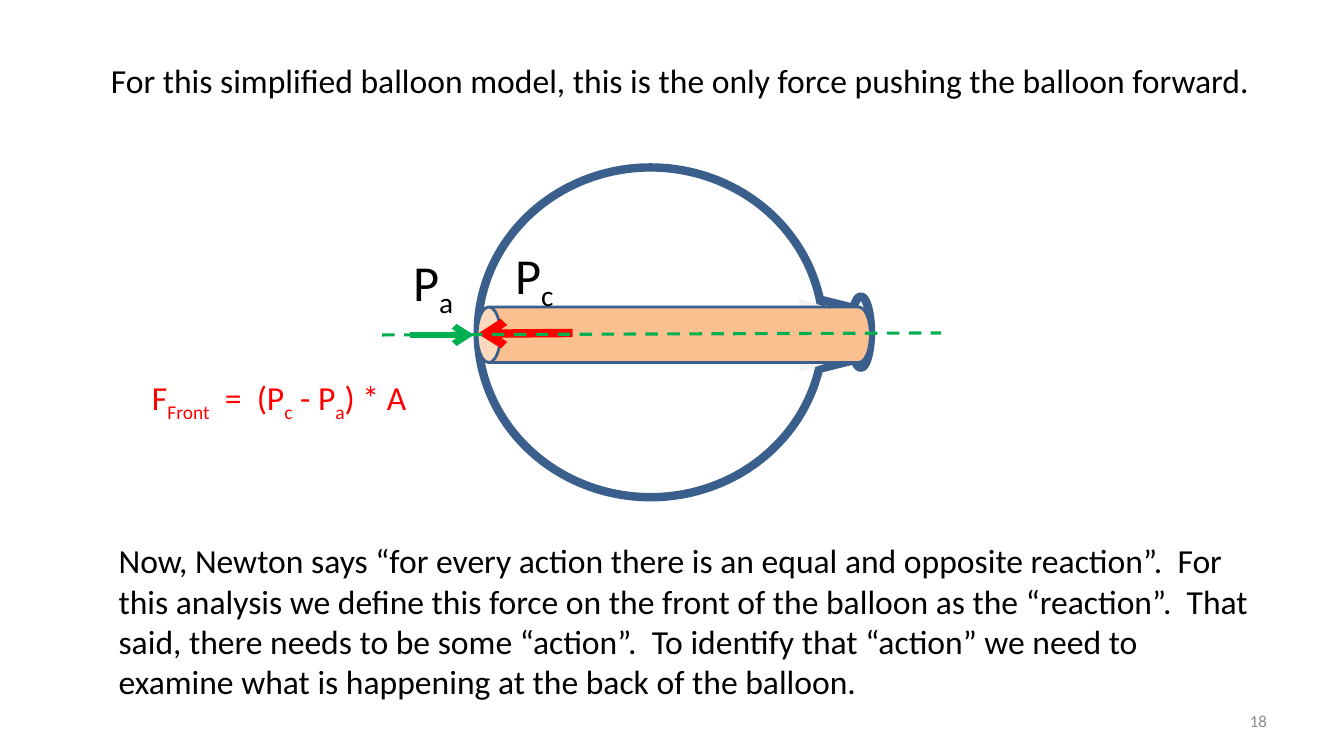
from lxml import etree
from pptx import Presentation
from pptx.dml.color import RGBColor
from pptx.enum.dml import MSO_LINE
from pptx.enum.shapes import MSO_CONNECTOR, MSO_SHAPE
from pptx.enum.text import MSO_ANCHOR, MSO_AUTO_SIZE, PP_ALIGN
from pptx.oxml.ns import qn
from pptx.util import Cm, Pt

BLACK = RGBColor(0x00, 0x00, 0x00)
WHITE = RGBColor(0xFF, 0xFF, 0xFF)
BLUE = RGBColor(0x3A, 0x5F, 0x8C)
PALE_GRAY = RGBColor(0xF2, 0xF2, 0xF2)
GRAY = RGBColor(0x8C, 0x8C, 0x8C)
ORANGE = RGBColor(0xFA, 0xC0, 0x90)
RED = RGBColor(0xFF, 0x00, 0x00)
GREEN = RGBColor(0x00, 0xB0, 0x50)

STRAIGHT = MSO_CONNECTOR.STRAIGHT
ELLIPSE, TRAPEZOID, CAN = MSO_SHAPE.OVAL, MSO_SHAPE.TRAPEZOID, MSO_SHAPE.CAN
DASH = MSO_LINE.DASH
TOP, MIDDLE = MSO_ANCHOR.TOP, MSO_ANCHOR.MIDDLE
LEFT, RIGHT = PP_ALIGN.LEFT, PP_ALIGN.RIGHT
NO_AUTOFIT = MSO_AUTO_SIZE.NONE

TITLE_BOX = (2.54, 1.37, 29.44, 1.27)
BALLOON_BOX = (12.04, 4.22, 8.71, 8.31)
EXPLANATION_BOX = (2.74, 13.49, 29.01, 4.37)
NUMBER_BOX = (24.28, 17.65, 7.9, 1.02)

TITLE = "For this simplified balloon model, this is the only force pushing the balloon forward."
EXPLANATION = (
    "Now, Newton says “for every action there is an equal and opposite reaction”.  "
    "For this analysis we define this force on the front of the balloon as the “reaction”.  "
    "That said, there needs to be some “action”.  To identify that “action” we need to "
    "examine what is happening at the back of the balloon."
)


def place(box, left, top, width, height):
    return [Cm(round(length, 2)) for length in (box[0] + left, box[1] + top, width, height)]


def write(shape, spans, size, color, align=LEFT, anchor=TOP):
    frame = shape.text_frame
    frame.word_wrap = True
    frame.auto_size = NO_AUTOFIT
    frame.vertical_anchor = anchor
    paragraph = frame.paragraphs[0]
    paragraph.alignment = align
    font = paragraph.font
    font.name, font.size = "Calibri", Pt(size)
    font.color.rgb = color
    for position, text in enumerate(spans):
        span = paragraph.add_run()
        span.text = text
        if position % 2:
            span.font._element.set("baseline", "-25000")


def add_text(shapes, area, spans, size, color, align=LEFT, anchor=TOP):
    write(shapes.add_textbox(*area), spans, size, color, align, anchor)


def add_part(shapes, kind, area, fill, line_width=0, rotation=0, adjustment=None):
    part = shapes.add_shape(kind, *area)
    part.shadow.inherit = False
    part.rotation = rotation
    part.fill.solid()
    part.fill.fore_color.rgb = fill
    if line_width:
        part.line.color.rgb = BLUE
        part.line.width = Pt(line_width)
    else:
        part.line.fill.background()
    if adjustment is not None:
        part.adjustments[0] = adjustment


def add_line(shapes, box, start, end, color, width, arrow=False, dash=None):
    ends = [Cm(round(box[axis] + point[axis], 2)) for point in (start, end) for axis in (0, 1)]
    connector = shapes.add_connector(STRAIGHT, *ends)
    line = connector.line
    line.color.rgb = color
    line.width = Pt(width)
    if dash is not None:
        line.dash_style = dash
    if arrow:
        etree.SubElement(line._get_or_add_ln(), qn("a:tailEnd"), type="arrow")
    etree.SubElement(connector._element.spPr, qn("a:effectLst"))


def add_title(slide, box):
    title = slide.shapes.title
    title.left, title.top, title.width, title.height = place(box, 0, 0, *box[2:])
    write(title, [TITLE], 24, BLACK)


def add_balloon(slide, box):
    parts = slide.shapes.add_group_shape().shapes
    add_part(parts, TRAPEZOID, place(box, 8.1, 3.63, 1.83, 1.14), WHITE, 6, 90)
    add_part(parts, ELLIPSE, place(box, 0, 0, *box[2:]), WHITE, 6)
    add_part(parts, ELLIPSE, place(box, 9.4, 3.25, 0.51, 1.8), PALE_GRAY, 6)
    add_part(parts, TRAPEZOID, place(box, 7.75, 3.66, 1.85, 1.14), PALE_GRAY, 0, 90, 0.32)
    add_part(slide.shapes, CAN, place(box, 4.24, -0.74, 1.4, 9.91), ORANGE, 2, 270, 0.42)


def add_forces(slide, box):
    shapes = slide.shapes
    add_line(shapes, box, (2.39, 4.17), (0, 4.19), RED, 6, arrow=True)
    add_text(shapes, place(box, 0.69, 1.8, 2.31, 1.8), ["P", "c"], 36, BLACK)
    add_line(shapes, box, (-2.41, 4.22), (11.68, 4.17), GREEN, 2.25, dash=DASH)
    formula = ["F", "Front", "  =  (P", "c", " - P", "a", ") * A"]
    add_text(shapes, place(box, -8.46, 5.16, 8.71, 1.27), formula, 24, RED)
    outside = shapes.add_group_shape().shapes
    add_line(outside, box, (-1.7, 4.22), (-0.1, 4.22), GREEN, 4.5, arrow=True)
    add_text(outside, place(box, -1.88, 1.98, 1.85, 1.8), ["P", "a"], 36, BLACK)


def add_explanation(slide, box):
    add_text(slide.shapes, place(box, 0, 0, *box[2:]), [EXPLANATION], 24, BLACK)


def add_number(slide, box):
    add_text(slide.shapes, place(box, 0, 0, *box[2:]), ["18"], 12, GRAY, RIGHT, MIDDLE)


def main():
    deck = Presentation()
    deck.slide_width, deck.slide_height = Cm(33.87), Cm(19.05)
    slide = deck.slides.add_slide(deck.slide_layouts.get_by_name("Title Only"))
    add_title(slide, TITLE_BOX)
    add_balloon(slide, BALLOON_BOX)
    add_forces(slide, BALLOON_BOX)
    add_explanation(slide, EXPLANATION_BOX)
    add_number(slide, NUMBER_BOX)
    deck.save("out.pptx")


if __name__ == "__main__":
    main()
